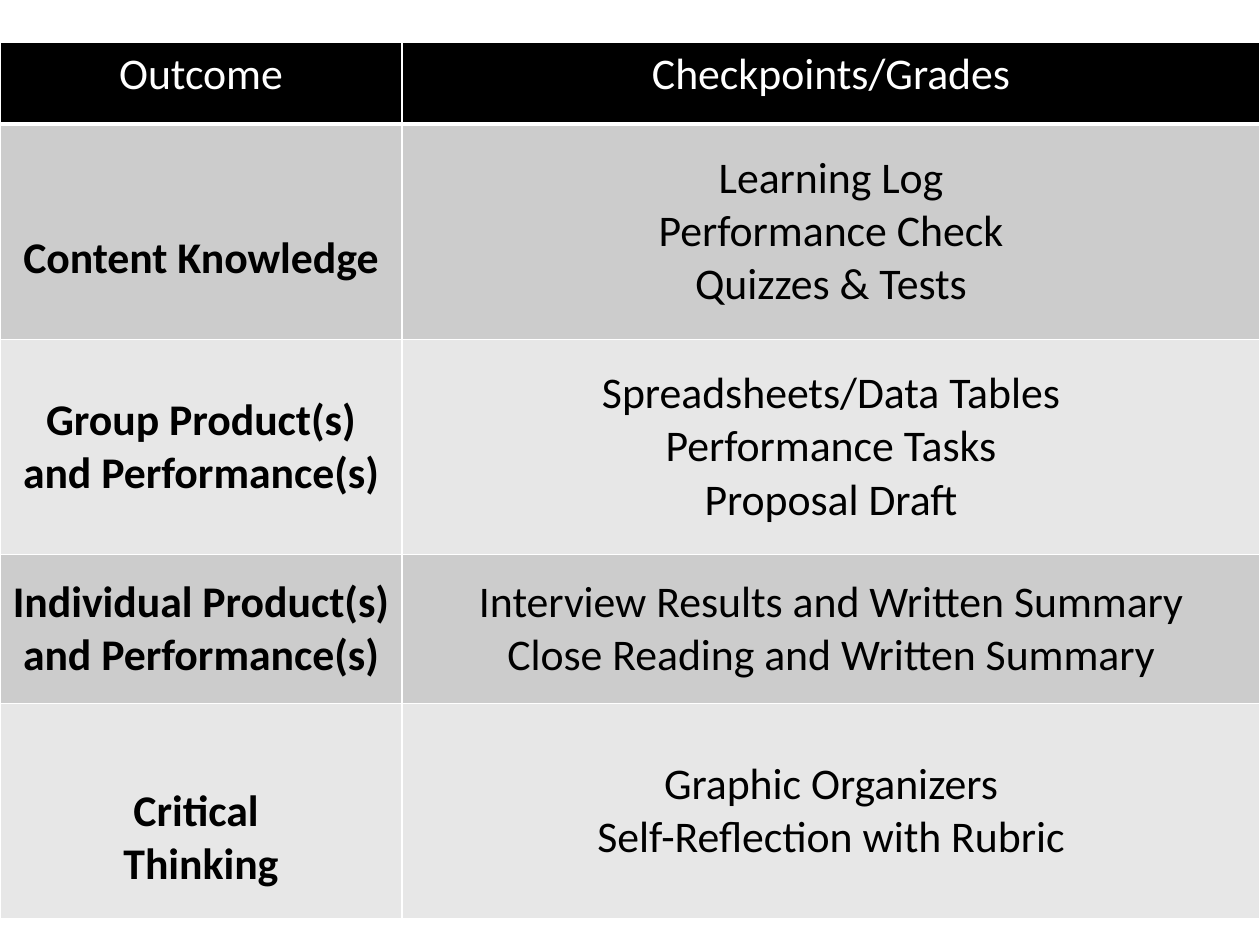
from lxml import etree
from pptx import Presentation
from pptx.dml.color import RGBColor
from pptx.enum import text
from pptx.oxml import ns
from pptx.util import Pt

BLACK = RGBColor(0x00, 0x00, 0x00)
WHITE = RGBColor(0xFF, 0xFF, 0xFF)
DARK_BAND = RGBColor(0xCC, 0xCC, 0xCC)
LIGHT_BAND = RGBColor(0xE7, 0xE7, 0xE7)

LINE_HEIGHT = 30.5
CELL_MARGIN = 3.6
COLUMN_WIDTHS = [229.7, 490.3]
ROW_HEIGHTS = [46.8, 123.1, 123.1, 85, 123.1]
LOWERED_ROWS = (1, 4)
HEADER_BORDERS = {"lnL": 1, "lnR": 1, "lnT": 1, "lnB": 3}

ROWS = [
    (["Outcome"], ["Checkpoints/Grades"]),
    (["Content Knowledge"],
     ["Learning Log", "Performance Check", "Quizzes & Tests"]),
    (["Group Product(s) and Performance(s)"],
     ["Spreadsheets/Data Tables", "Performance Tasks", "Proposal Draft"]),
    (["Individual Product(s) and Performance(s)"],
     ["Interview Results and Written Summary", "Close Reading and Written Summary"]),
    (["Critical ", "Thinking"],
     ["Graphic Organizers", "Self-Reflection with Rubric"]),
]


def add_borders(cell, widths):
    properties = cell._tc.get_or_add_tcPr()
    for position, (side, width) in enumerate(widths.items()):
        line = etree.Element(ns.qn(f"a:{side}"), w=str(Pt(width)))
        fill = etree.SubElement(line, ns.qn("a:solidFill"))
        etree.SubElement(fill, ns.qn("a:srgbClr"), val=str(WHITE))
        properties.insert(position, line)


deck = Presentation()
deck.slide_width, deck.slide_height = Pt(720), Pt(540)
page = deck.slides.add_slide(deck.slide_layouts[6])

frame = page.shapes.add_table(
    len(ROWS), len(COLUMN_WIDTHS), Pt(0), Pt(24), Pt(720), Pt(sum(ROW_HEIGHTS)))
table = frame.table
for column, width in zip(table.columns, COLUMN_WIDTHS):
    column.width = Pt(width)
for row, height in zip(table.rows, ROW_HEIGHTS):
    row.height = Pt(height)

for row_index, row_texts in enumerate(ROWS):
    is_header = row_index == 0
    band = BLACK if is_header else DARK_BAND if row_index % 2 else LIGHT_BAND
    for column_index, lines in enumerate(row_texts):
        cell = table.cell(row_index, column_index)
        cell.fill.solid()
        cell.fill.fore_color.rgb = band
        if is_header:
            add_borders(cell, HEADER_BORDERS)
        else:
            cell.vertical_anchor = text.MSO_ANCHOR.MIDDLE
        if column_index == 0 and row_index in LOWERED_ROWS:
            cell.margin_top = Pt(CELL_MARGIN + LINE_HEIGHT)
        for line_index, line in enumerate(lines):
            body = cell.text_frame
            para = body.add_paragraph() if line_index else body.paragraphs[0]
            para.alignment = text.PP_ALIGN.CENTER
            span = para.add_run()
            span.text = line
            span.font.name = "Calibri"
            span.font.size = Pt(25)
            span.font.bold = column_index == 0 and not is_header
            span.font.color.rgb = WHITE if is_header else BLACK

deck.save("out.pptx")
